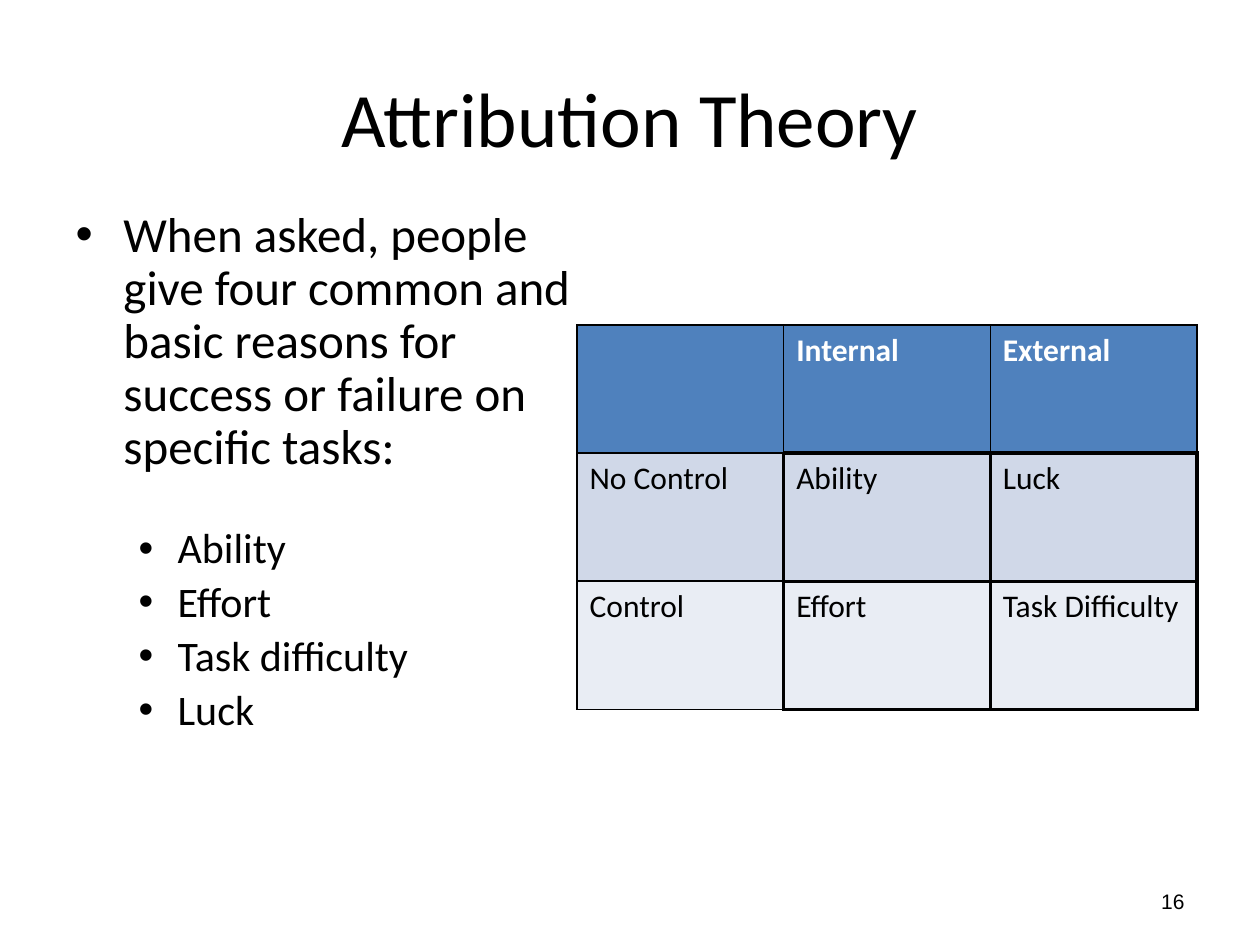
from dataclasses import dataclass

from lxml import etree
from pptx import Presentation
from pptx.dml.color import RGBColor
from pptx.enum import text as t
from pptx.oxml import ns
from pptx.util import Inches, Pt


@dataclass(frozen=True)
class Theme:
    ink: str = "000000"
    header_ink: str = "FFFFFF"
    row_fills: tuple[str, ...] = ("4F81BD", "D0D8E8", "E9EDF4")
    font: str = "Calibri"
    number_font: str = "Arial"
    title_size: int = 44
    lead_size: int = 28
    reason_size: int = 24
    cell_size: int = 18
    number_size: int = 12
    thin: float = 1
    thick: float = 2.25


@dataclass(frozen=True)
class Bullet:
    words: str
    level: int
    size: int
    indent: float
    hanging: float
    space_before: float


THEME = Theme()

REASON_GAP = 4.8  # 20% of the reason size
LIST_GAP = 30  # sets the reasons apart from the lead sentence

LEAD = Bullet("When asked, people give four common and basic reasons for "
              "success or failure on specific tasks:",
              0, THEME.lead_size, 0.38, 0.38, 0)
REASONS = [
    Bullet(words, 1, THEME.reason_size, 0.81, 0.31,
           REASON_GAP if position else LIST_GAP)
    for position, words in enumerate(
        ["Ability", "Effort", "Task difficulty", "Luck"])
]

MATRIX = [
    ["", "Internal", "External"],
    ["No Control", "Ability", "Luck"],
    ["Control", "Effort", "Task Difficulty"],
]


def style_font(font, size: int, color: str = THEME.ink,
               name: str = THEME.font, bold: bool = False) -> None:
    font.name, font.size, font.bold = name, Pt(size), bold
    font.color.rgb = RGBColor.from_string(color)


def place(shape, left: float, top: float, width: float, height: float) -> None:
    shape.left, shape.top = Inches(left), Inches(top)
    shape.width, shape.height = Inches(width), Inches(height)


def write_bullet(paragraph, bullet: Bullet) -> None:
    paragraph.text = bullet.words
    paragraph.level = bullet.level
    paragraph.line_spacing = 0.9
    paragraph.space_before = Pt(bullet.space_before)
    properties = paragraph._p.get_or_add_pPr()
    properties.set("marL", str(Inches(bullet.indent)))
    properties.set("indent", str(-Inches(bullet.hanging)))
    etree.SubElement(properties, ns.qn("a:buFont"), typeface="Arial")
    etree.SubElement(properties, ns.qn("a:buChar"), char="•")
    style_font(paragraph.runs[0].font, bullet.size)


def in_causes(row: int, column: int) -> bool:
    """Whether the cell is one of the four causes, which have thick borders."""
    return 1 <= row < len(MATRIX) and 1 <= column < len(MATRIX[0])


def draw_borders(cell, row: int, column: int) -> None:
    neighbours = {"a:lnL": (row, column - 1), "a:lnR": (row, column + 1),
                  "a:lnT": (row - 1, column), "a:lnB": (row + 1, column)}
    properties = cell._tc.get_or_add_tcPr()
    for side, neighbour in neighbours.items():
        bold_edge = in_causes(row, column) or in_causes(*neighbour)
        width = Pt(THEME.thick if bold_edge else THEME.thin)
        line = etree.SubElement(properties, ns.qn(side), w=str(width))
        fill = etree.SubElement(line, ns.qn("a:solidFill"))
        etree.SubElement(fill, ns.qn("a:srgbClr"), val=THEME.ink)


def draw_matrix(slide) -> None:
    table = slide.shapes.add_table(
        len(MATRIX), len(MATRIX[0]),
        Inches(4.58), Inches(2.58), Inches(4.92), Inches(3.05)).table
    table.first_row = table.horz_banding = False
    for row, labels in enumerate(MATRIX):
        header = row == 0
        for column, label in enumerate(labels):
            cell = table.cell(row, column)
            draw_borders(cell, row, column)
            cell.fill.solid()
            cell.fill.fore_color.rgb = RGBColor.from_string(THEME.row_fills[row])
            cell.text = label
            for run in cell.text_frame.paragraphs[0].runs:
                style_font(run.font, THEME.cell_size,
                           THEME.header_ink if header else THEME.ink,
                           bold=header)


def main() -> None:
    deck = Presentation()
    deck.slide_width, deck.slide_height = Inches(10), Inches(7.5)
    slide = deck.slides.add_slide(deck.slide_layouts[1])

    # Title
    title = slide.shapes.title
    place(title, 0.5, 0.3, 9, 1.25)
    title.text_frame.text = "Attribution Theory"
    title.text_frame.vertical_anchor = t.MSO_ANCHOR.MIDDLE
    heading = title.text_frame.paragraphs[0]
    heading.alignment = t.PP_ALIGN.CENTER
    style_font(heading.runs[0].font, THEME.title_size)

    # Reasons people give
    body = slide.placeholders[1]
    place(body, 0.5, 1.62, 4.42, 4.95)
    body.text_frame.auto_size = t.MSO_AUTO_SIZE.NONE
    write_bullet(body.text_frame.paragraphs[0], LEAD)
    for reason in REASONS:
        write_bullet(body.text_frame.add_paragraph(), reason)

    # Locus and control matrix
    draw_matrix(slide)

    # Page number
    page = slide.shapes.add_textbox(
        Inches(7.17), Inches(6.95), Inches(2.33), Inches(0.4)).text_frame
    page.word_wrap = True
    page.vertical_anchor = t.MSO_ANCHOR.MIDDLE
    page.text = "16"
    page.paragraphs[0].alignment = t.PP_ALIGN.RIGHT
    style_font(page.paragraphs[0].runs[0].font, THEME.number_size,
               name=THEME.number_font)

    deck.save("out.pptx")


if __name__ == "__main__":
    main()
